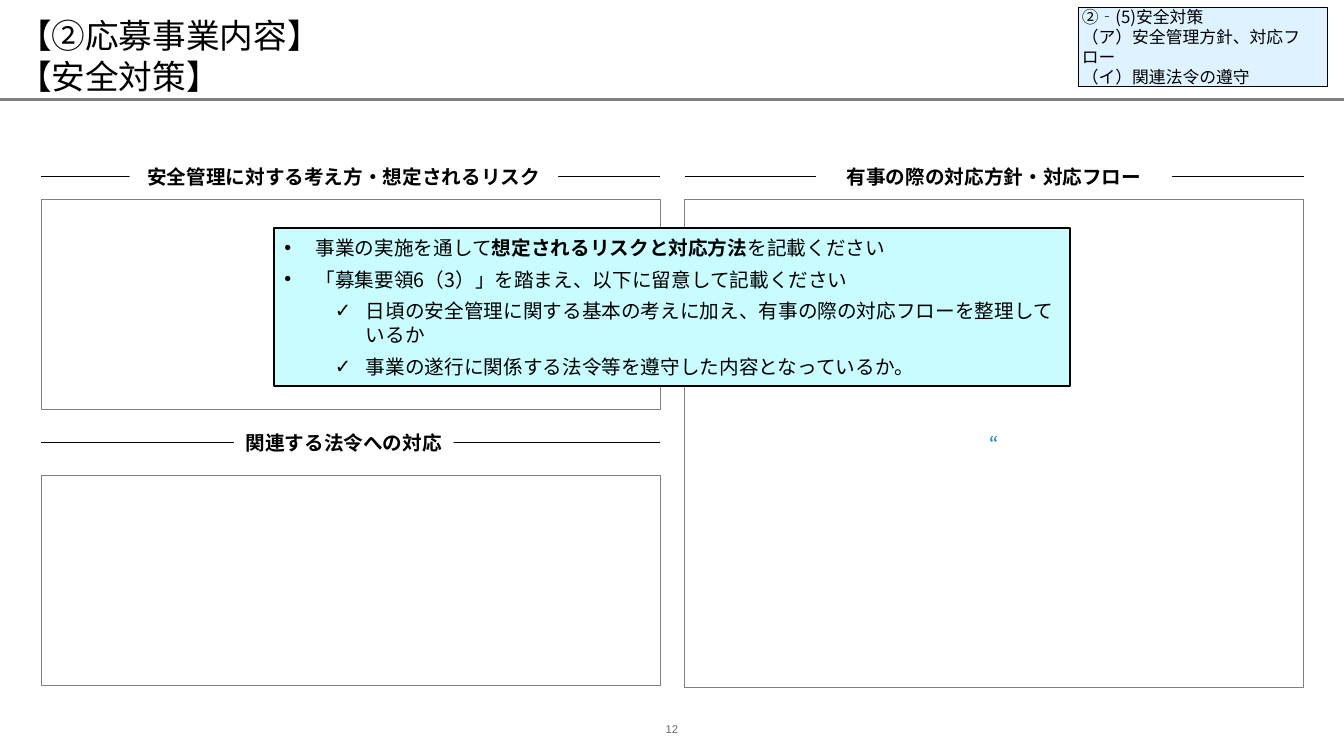
from lxml.etree import SubElement
from pptx import Presentation
from pptx.dml.color import RGBColor
from pptx.enum.shapes import MSO_CONNECTOR as CONN, MSO_SHAPE as SHAPE
from pptx.enum.text import MSO_ANCHOR as ANCHOR, MSO_AUTO_SIZE as AUTO, PP_ALIGN as ALIGN
from pptx.oxml.ns import qn
from pptx.util import Inches, Pt

BLACK = RGBColor(0x00, 0x00, 0x00)
WHITE = RGBColor(0xFF, 0xFF, 0xFF)
GRAY = RGBColor(0x80, 0x80, 0x80)
NUMBER_GRAY = RGBColor(0x6B, 0x6B, 0x6B)
QUOTE_BLUE = RGBColor(0x03, 0x7E, 0xCD)
TAG_BLUE = RGBColor(0xDF, 0xF2, 0xFF)
GUIDE_CYAN = RGBColor(0xC8, 0xFC, 0xFF)
FONT = "Noto Sans CJK JP"

WIDTH, HEIGHT = 13.33, 7.5
COL_W = 6.14
COLS = (0.41, WIDTH - 0.4 - COL_W)
ROWS = (1.75, 4.39)
BOX_TOPS = (1.98, 4.72)
BOX_H, TALL_H = 2.08, 4.84
LABEL_H = 0.24

GUIDE = [
    (0, [("事業の実施を通して", False), ("想定されるリスクと対応方法", True),
         ("を記載ください", False)]),
    (0, [("「募集要領6（3）」を踏まえ、以下に留意して記載ください", False)]),
    (1, [("日頃の安全管理に関する基本の考えに加え、有事の際の対応フローを整理しているか", False)]),
    (1, [("事業の遂行に関係する法令等を遵守した内容となっているか。", False)]),
]


def place(sp, x, y, w, h):
    sp.left, sp.top, sp.width, sp.height = (Inches(v) for v in (x, y, w, h))


def set_frame(tf, inset_x=0.1, inset_y=0.05, anchor=ANCHOR.MIDDLE):
    tf.word_wrap = True
    tf.auto_size = AUTO.NONE
    tf.vertical_anchor = anchor
    tf.margin_left = tf.margin_right = Inches(inset_x)
    tf.margin_top = tf.margin_bottom = Inches(inset_y)


def add_run(p, text, size, color=BLACK, bold=False, font=FONT):
    """Add a run with the same typeface for Latin and East Asian text."""
    r = p.add_run()
    r.text = text
    r.font.name, r.font.size, r.font.bold = font, Pt(size), bold
    r.font.color.rgb = color
    SubElement(r.font._element, qn("a:ea")).set("typeface", font)


def paint(sp, fill=None, line=None, weight=0.75):
    if fill is None:
        sp.fill.background()
    else:
        sp.fill.solid()
        sp.fill.fore_color.rgb = fill
    if line is None:
        sp.line.fill.background()
    else:
        sp.line.color.rgb = line
        sp.line.width = Pt(weight)


def add_rect(s, x, y, w, h, **look):
    sp = s.shapes.add_shape(SHAPE.RECTANGLE, 0, 0, 0, 0)
    place(sp, x, y, w, h)
    sp.shadow.inherit = False
    paint(sp, **look)
    set_frame(sp.text_frame)
    return sp


def add_rule(s, x, y, w, color, weight):
    rule = s.shapes.add_connector(CONN.STRAIGHT, Inches(x), Inches(y), Inches(x + w), Inches(y))
    rule.line.color.rgb = color
    rule.line.width = Pt(weight)
    SubElement(rule._element.spPr, qn("a:effectLst"))


def add_heading(s, x, y, text, label_w, shift=0):
    """Rule across a column, broken by a label moved by shift from its middle."""
    add_rule(s, x, y, COL_W, BLACK, 1)
    label_x = x + (COL_W - label_w) / 2 + shift
    sp = add_rect(s, label_x, y - LABEL_H / 2, label_w, LABEL_H, fill=WHITE)
    p = sp.text_frame.paragraphs[0]
    p.alignment = ALIGN.CENTER
    add_run(p, text, 14, bold=True)


def add_title(s, lines):
    title = s.shapes.title
    place(title, 0.18, 0, WIDTH - 0.18, 0.95)
    set_frame(title.text_frame, 0, 0, ANCHOR.BOTTOM)
    p = title.text_frame.paragraphs[0]
    p.alignment = ALIGN.LEFT
    for i, line in enumerate(lines):
        if i:
            p.add_line_break()
        add_run(p, line, 24)


def add_tag(s, lines):
    tf = add_rect(s, 10.69, 0.07, 2.47, 0.79, fill=TAG_BLUE, line=BLACK, weight=0.25).text_frame
    set_frame(tf, 0.04, 0.04)
    for i, line in enumerate(lines):
        p = tf.add_paragraph() if i else tf.paragraphs[0]
        p.alignment = ALIGN.LEFT
        add_run(p, line, 12)


def add_bullet(p, level):
    p.level = level
    pPr = p._p.get_or_add_pPr()
    pPr.set("marL", str(Inches((0.31, 0.81)[level])))
    pPr.set("indent", str(Inches(-0.31)))
    SubElement(pPr, qn("a:buFont")).set("typeface", "Arial")
    SubElement(pPr, qn("a:buChar")).set("char", "•✓"[level])


def add_guide(s, items):
    """Fill the body placeholder and bring it in front of the boxes."""
    body = s.placeholders[1]
    s.shapes._spTree.append(body._element)
    place(body, 2.72, 2.26, 7.89, 1.57)
    paint(body, GUIDE_CYAN, BLACK, 1.5)
    tf = body.text_frame
    set_frame(tf)
    for i, (level, runs) in enumerate(items):
        p = tf.add_paragraph() if i else tf.paragraphs[0]
        add_bullet(p, level)
        p.alignment = ALIGN.LEFT
        p.space_before = Pt(6 if i else 0)
        for text, bold in runs:
            add_run(p, text, 14, bold=bold)


def add_page_number(s, number):
    w, h = 0.33, 0.1
    sp = s.shapes.add_textbox(0, 0, 0, 0)
    place(sp, (WIDTH - w) / 2, 7.18, w, h)
    set_frame(sp.text_frame, 0, 0)
    p = sp.text_frame.paragraphs[0]
    p.alignment = ALIGN.CENTER
    add_run(p, number, 8, NUMBER_GRAY, font="Arial")


def main():
    prs = Presentation()
    prs.slide_width, prs.slide_height = Inches(WIDTH), Inches(HEIGHT)
    s = prs.slides.add_slide(prs.slide_layouts[1])

    add_title(s, ["【②応募事業内容】", "【安全対策】"])
    add_rule(s, 0, 0.99, WIDTH, GRAY, 2.25)
    add_tag(s, ["②‐(5)安全対策", "（ア）安全管理方針、対応フロー", "（イ）関連法令の遵守"])

    left, right = COLS
    add_heading(s, left, ROWS[0], "安全管理に対する考え方・想定されるリスク", 4.25, -0.07)
    add_heading(s, left, ROWS[1], "関連する法令への対応", 2.18, -0.07)
    add_heading(s, right, ROWS[0], "有事の際の対応方針・対応フロー", 3.53)

    for top in BOX_TOPS:
        add_rect(s, left, top, COL_W, BOX_H, line=GRAY)
    flow = add_rect(s, right, BOX_TOPS[0], COL_W, TALL_H, line=GRAY)
    p = flow.text_frame.paragraphs[0]
    p.alignment = ALIGN.CENTER
    add_run(p, "“", 14, QUOTE_BLUE)

    add_guide(s, GUIDE)
    add_page_number(s, "12")
    prs.save("out.pptx")


if __name__ == "__main__":
    main()
